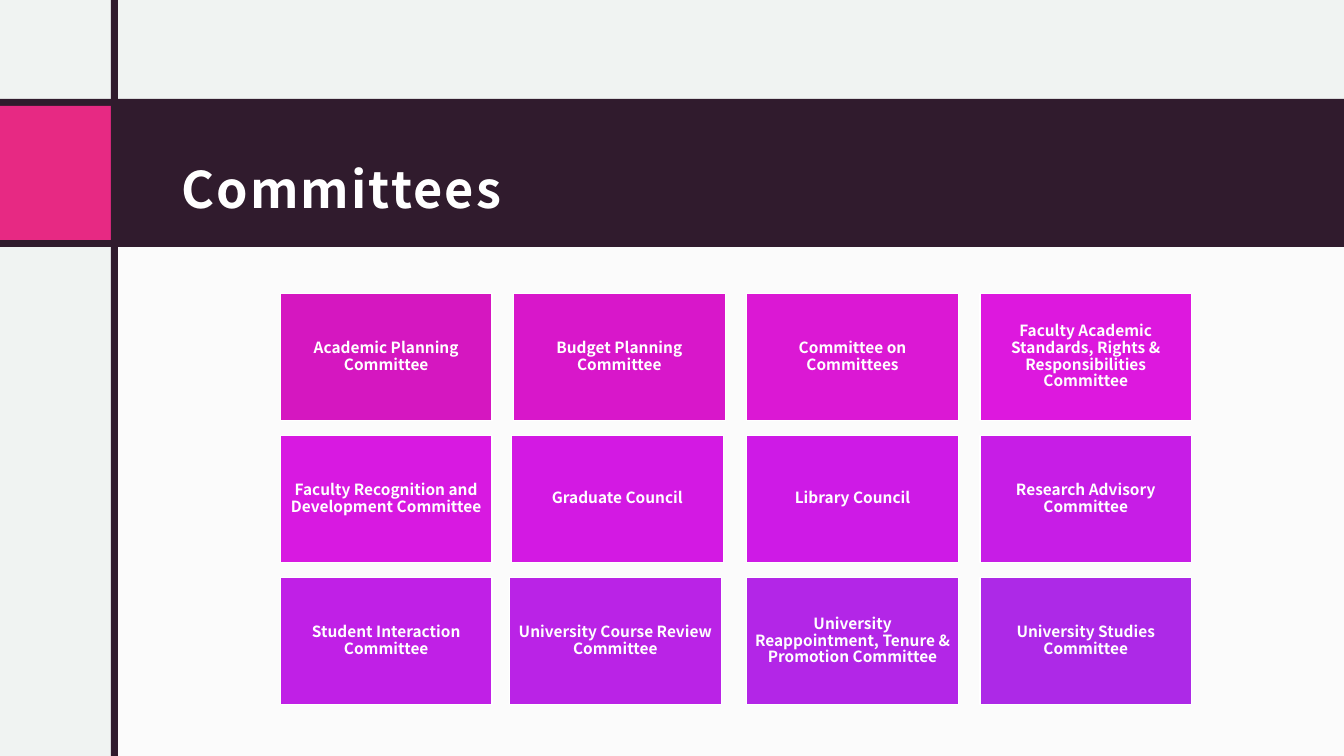
from lxml.etree import SubElement
from pptx import Presentation
from pptx.dml.color import RGBColor
from pptx.enum.shapes import MSO_SHAPE as Preset
from pptx.enum.text import MSO_ANCHOR as Anchor, MSO_AUTO_SIZE as AutoSize, PP_ALIGN as Align
from pptx.oxml.ns import qn
from pptx.util import Inches, Pt

PALE = RGBColor(0xF0, 0xF3, 0xF2)
WHITE = RGBColor(0xFF, 0xFF, 0xFF)
PLUM = RGBColor(0x30, 0x1B, 0x2D)
PINK = RGBColor(0xE7, 0x29, 0x83)

COMMITTEES = [
    ("Academic Planning Committee", RGBColor(0xD5, 0x17, 0xC0)),
    ("Budget Planning Committee", RGBColor(0xD8, 0x17, 0xCA)),
    ("Committee on Committees", RGBColor(0xDB, 0x18, 0xD4)),
    ("Faculty Academic Standards, Rights & Responsibilities Committee", RGBColor(0xDD, 0x18, 0xDE)),
    ("Faculty Recognition and Development Committee", RGBColor(0xD8, 0x19, 0xE1)),
    ("Graduate Council", RGBColor(0xD3, 0x19, 0xE3)),
    ("Library Council", RGBColor(0xCE, 0x1A, 0xE6)),
    ("Research Advisory Committee", RGBColor(0xC7, 0x1D, 0xE6)),
    ("Student Interaction Committee", RGBColor(0xC0, 0x20, 0xE6)),
    ("University Course Review Committee", RGBColor(0xBA, 0x23, 0xE6)),
    ("University Reappointment, Tenure & Promotion Committee", RGBColor(0xB3, 0x26, 0xE7)),
    ("University Studies Committee", RGBColor(0xAD, 0x29, 0xE7)),
]


class SlideBuilder:
    font_name = "Noto Sans CJK JP"

    def __init__(self, presentation):
        self.column = presentation.slide_width / 100
        self.row = presentation.slide_height / 100
        self.slide = presentation.slides.add_slide(presentation.slide_layouts[5])
        self.slide.background.fill.solid()
        self.slide.background.fill.fore_color.rgb = PALE

    def place(self, left, top, width, height):
        return (round(left * self.column), round(top * self.row),
                round(width * self.column), round(height * self.row))

    def rectangle(self, area, color, opacity=100):
        shape = self.slide.shapes.add_shape(Preset.RECTANGLE, *self.place(*area))
        shape.shadow.inherit = False
        shape.fill.solid()
        shape.fill.fore_color.rgb = color
        shape.line.fill.background()
        if opacity < 100:
            color_element = shape._element.spPr.find(qn("a:solidFill"))[0]
            SubElement(color_element, qn("a:alpha"), val=str(opacity * 1000))
        return shape

    def set_text(self, shape, text, size, align, spacing, margin):
        frame = shape.text_frame
        frame.text = text
        frame.word_wrap = True
        frame.auto_size = AutoSize.NONE
        frame.vertical_anchor = Anchor.MIDDLE
        frame.margin_left = frame.margin_right = Inches(margin)
        frame.margin_top = frame.margin_bottom = Inches(margin)
        paragraph = frame.paragraphs[0]
        paragraph.alignment = align
        paragraph.line_spacing = spacing
        paragraph.font.name = self.font_name
        paragraph.font.size = Pt(size)
        paragraph.font.bold = True
        paragraph.font.color.rgb = WHITE
        return paragraph

    def title(self, area, text):
        shape = self.slide.shapes.title
        shape.left, shape.top, shape.width, shape.height = self.place(*area)
        paragraph = self.set_text(shape, text, 36, Align.LEFT, 1.5, 0.12)
        shape.text_frame.margin_bottom = Inches(0.1)
        paragraph.runs[0].font._element.set("spc", "150")
        shape._element.getparent().append(shape._element)

    def card(self, area, text, color):
        shape = self.rectangle(area, color)
        shape.line.color.rgb = WHITE
        shape.line.width = Pt(1)
        self.set_text(shape, text, 11, Align.CENTER, 0.9, 0.05)


def main():
    presentation = Presentation()
    presentation.slide_width = Inches(13.33)
    presentation.slide_height = Inches(7.5)
    builder = SlideBuilder(presentation)
    builder.rectangle((8.55, 31.07, 91.45, 68.93), WHITE, opacity=75)
    builder.rectangle((0, 13.07, 100, 19.6), PLUM)
    builder.title((12.6, 15.2, 82.15, 15.07), "Committees")
    builder.rectangle((0, 14, 8.25, 17.73), PINK)
    builder.rectangle((8.25, 0, 0.53, 100), PLUM)
    for index, (name, color) in enumerate(COMMITTEES):
        row, column = divmod(index, 4)
        nudge = 0.15 * row if column == 1 else 0
        area = (20.86 + 17.35 * column - nudge, 38.8 + 18.8 * row, 15.76, 16.8)
        builder.card(area, name, color)
    presentation.save("out.pptx")


if __name__ == "__main__":
    main()
